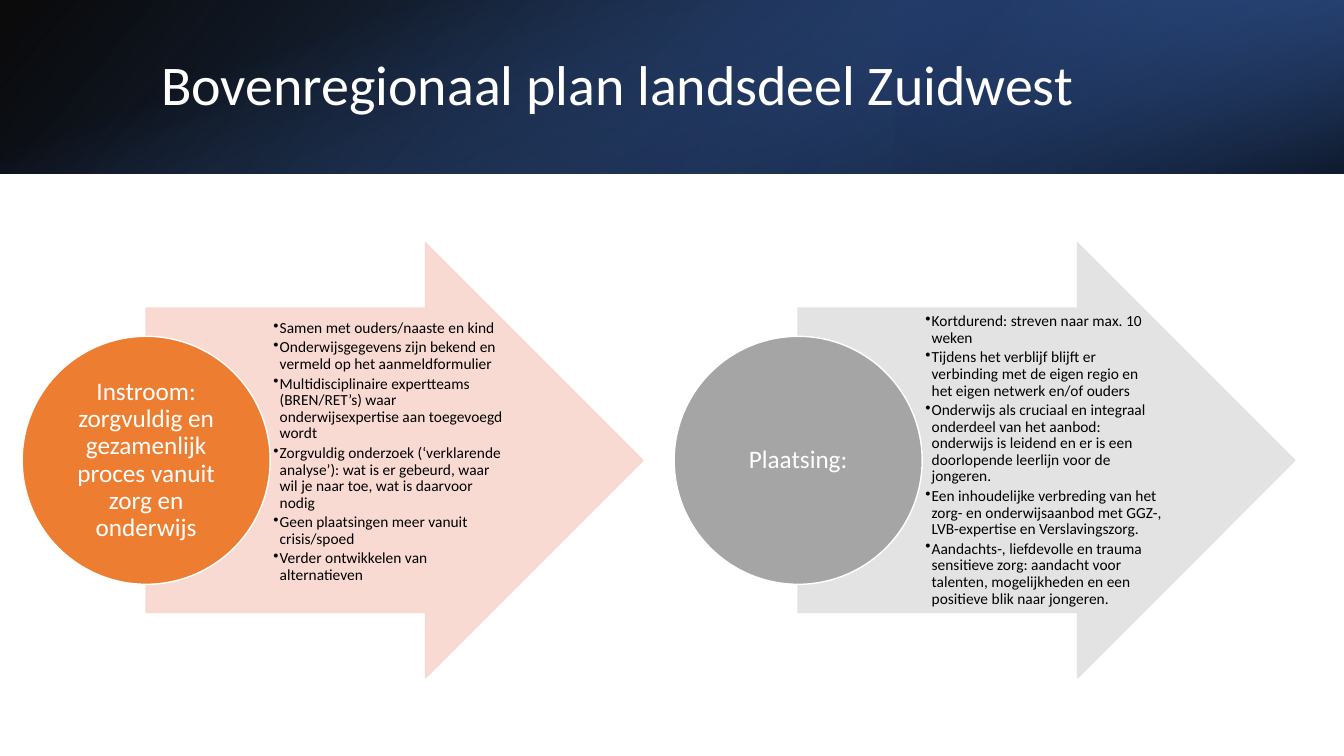
from dataclasses import dataclass

from lxml import etree
from pptx import Presentation
from pptx.dml.color import RGBColor
from pptx.enum.shapes import MSO_SHAPE as Shape
from pptx.enum.text import MSO_ANCHOR as Anchor, MSO_AUTO_SIZE as AutoSize, PP_ALIGN as Align
from pptx.oxml.ns import qn
from pptx.util import Cm, Pt

COLORS = {
    "black": "000000", "white": "FFFFFF", "navy": "203864", "deep": "2F5597", "blue": "4472C4",
    "orange": "ED7D31", "peach": "F8D7CE", "gray": "A5A5A5", "silver": "E1E1E1",
}
FONT = "Calibri"
SLIDE_W, SLIDE_H, HEADER_H = 33.87, 19.05, 4.38

# Panel geometry in cm: everything is centred on one horizontal axis
AXIS_Y, PANEL_X, PITCH = 11.6, 0.56, 16.43
CIRCLE_D = 6.25
ARROW_W, ARROW_H, SHAFT = 12.52, 10.96, 0.7
LIST_W = 6.1


@dataclass
class Stop:
    pos: int
    color: str
    alpha: int


@dataclass
class Band:
    left: float
    top: float
    width: float
    height: float
    angle: int
    stops: tuple[Stop, Stop]
    rotation: int = 0
    flip: bool = False


@dataclass
class Panel:
    heading: str
    circle: str
    arrow: str
    points: list[str]
    bottom_inset: float = 0.03


BANDS = [
    Band(0, 0, SLIDE_W, HEADER_H, 140, (Stop(0, "black", 96), Stop(100, "deep", 100)), flip=True),
    Band(SLIDE_W * 2 / 3, 0, SLIDE_W / 3, HEADER_H, 320,
         (Stop(19, "navy", 68), Stop(100, "blue", 79)), rotation=180, flip=True),
    Band((SLIDE_W - HEADER_H) / 2, (HEADER_H - SLIDE_W) / 2, HEADER_H, SLIDE_W, 340,
         (Stop(23, "blue", 0), Stop(99, "black", 74)), rotation=90),
]

PANELS = [
    Panel("Instroom: zorgvuldig en gezamenlijk proces vanuit zorg en onderwijs", "orange", "peach", [
        "Samen met ouders/naaste en kind",
        "Onderwijsgegevens zijn bekend en vermeld op het aanmeldformulier",
        "Multidisciplinaire expertteams (BREN/RET’s) waar onderwijsexpertise aan toegevoegd wordt",
        "Zorgvuldig onderzoek (‘verklarende analyse’): wat is er gebeurd, waar wil je naar toe, "
        "wat is daarvoor nodig",
        "Geen plaatsingen meer vanuit crisis/spoed",
        "Verder ontwikkelen van alternatieven",
    ], bottom_inset=0.45),
    Panel("Plaatsing:", "gray", "silver", [
        "Kortdurend: streven naar max. 10 weken",
        "Tijdens het verblijf blijft er verbinding met de eigen regio en het eigen netwerk en/of ouders",
        "Onderwijs als cruciaal en integraal onderdeel van het aanbod: onderwijs is leidend en er is "
        "een doorlopende leerlijn voor de jongeren.",
        "Een inhoudelijke verbreding van het zorg- en onderwijsaanbod met GGZ-, LVB-expertise en "
        "Verslavingszorg.",
        "Aandachts-, liefdevolle en trauma sensitieve zorg: aandacht voor talenten, mogelijkheden en "
        "een positieve blik naar jongeren.",
    ]),
]


def rgb(name: str) -> RGBColor:
    return RGBColor.from_string(COLORS[name])


def set_alpha(color_el, percent: int) -> None:
    etree.SubElement(color_el, qn("a:alpha")).set("val", str(percent * 1000))


def add_band(slide, band: Band) -> None:
    sp = slide.shapes.add_shape(Shape.RECTANGLE, Cm(band.left), Cm(band.top), Cm(band.width), Cm(band.height))
    sp.shadow.inherit = False
    sp.line.fill.background()
    sp.rotation = band.rotation
    if band.flip:
        sp._element.spPr.find(qn("a:xfrm")).set("flipH", "1")
    sp.fill.gradient()
    sp.fill.gradient_angle = 360 - band.angle
    for gs, stop in zip(sp.fill.gradient_stops, band.stops):
        gs.position = stop.pos / 100
        gs.color.rgb = rgb(stop.color)
    for el, stop in zip(sp._element.spPr.iter(qn("a:srgbClr")), band.stops):
        set_alpha(el, stop.alpha)


def add_solid(slide, kind, left: float, width: float, height: float, fill: str, line: str):
    sp = slide.shapes.add_shape(kind, Cm(left), Cm(AXIS_Y - height / 2), Cm(width), Cm(height))
    sp.shadow.inherit = False
    sp.fill.solid()
    sp.fill.fore_color.rgb = rgb(fill)
    sp.line.color.rgb = rgb(line)
    sp.line.width = Pt(1)
    return sp


def set_frame(tf, left: float, right: float, bottom: float = 0.03) -> None:
    tf.word_wrap = True
    tf.auto_size = AutoSize.NONE
    tf.vertical_anchor = Anchor.MIDDLE
    tf.margin_left, tf.margin_right = Cm(left), Cm(right)
    tf.margin_top, tf.margin_bottom = Cm(0.03), Cm(bottom)


def format_paragraph(p, size: int, color: str, align=Align.LEFT) -> None:
    p.alignment = align
    p.line_spacing = 0.9
    for r in p.runs:
        r.font.name = FONT
        r.font.size = Pt(size)
        r.font.color.rgb = rgb(color)


def add_bullet(p) -> None:
    pPr = p._p.get_or_add_pPr()
    pPr.set("marL", str(Cm(0.16)))
    pPr.set("indent", str(-Cm(0.16)))
    etree.SubElement(pPr, qn("a:buChar")).set("char", "•")


def add_panel(slide, panel: Panel, left: float) -> None:
    # Arrow starting at the circle's centre
    arrow = add_solid(slide, Shape.RIGHT_ARROW, left + CIRCLE_D / 2, ARROW_W, ARROW_H, panel.arrow, panel.arrow)
    arrow.adjustments[0] = SHAFT
    for el in arrow._element.spPr.iter(qn("a:srgbClr")):
        set_alpha(el, 90)

    # Bullet list on the shaft
    list_h = ARROW_H * SHAFT
    box = slide.shapes.add_textbox(Cm(left + CIRCLE_D), Cm(AXIS_Y - list_h / 2), Cm(LIST_W), Cm(list_h))
    tf = box.text_frame
    set_frame(tf, 0.08, 0.05, panel.bottom_inset)
    tf.text = "\n".join(panel.points)
    for p in tf.paragraphs:
        format_paragraph(p, 11, "black")
        p.space_after = Pt(2)
        add_bullet(p)

    # Circle with heading
    circle = add_solid(slide, Shape.OVAL, left, CIRCLE_D, CIRCLE_D, panel.circle, "white")
    tf = circle.text_frame
    set_frame(tf, 0.03, 0.03)
    tf.text = panel.heading
    format_paragraph(tf.paragraphs[0], 18, "white", Align.CENTER)


def main() -> None:
    prs = Presentation()
    prs.slide_width, prs.slide_height = Cm(SLIDE_W), Cm(SLIDE_H)
    slide = prs.slides.add_slide(prs.slide_layouts[5])

    # Header bands, with the title raised above them
    for band in BANDS:
        add_band(slide, band)
    title = slide.shapes.title
    slide.shapes._spTree.append(title._element)
    title.left, title.top, title.width, title.height = Cm(3.81), Cm(0.97), Cm(27.89), Cm(2.44)
    tf = title.text_frame
    tf.text = "Bovenregionaal plan landsdeel Zuidwest"
    set_frame(tf, 0.25, 0.25)
    format_paragraph(tf.paragraphs[0], 40, "white")

    # Panels
    for i, panel in enumerate(PANELS):
        add_panel(slide, panel, PANEL_X + i * PITCH)

    prs.save("out.pptx")


if __name__ == "__main__":
    main()
